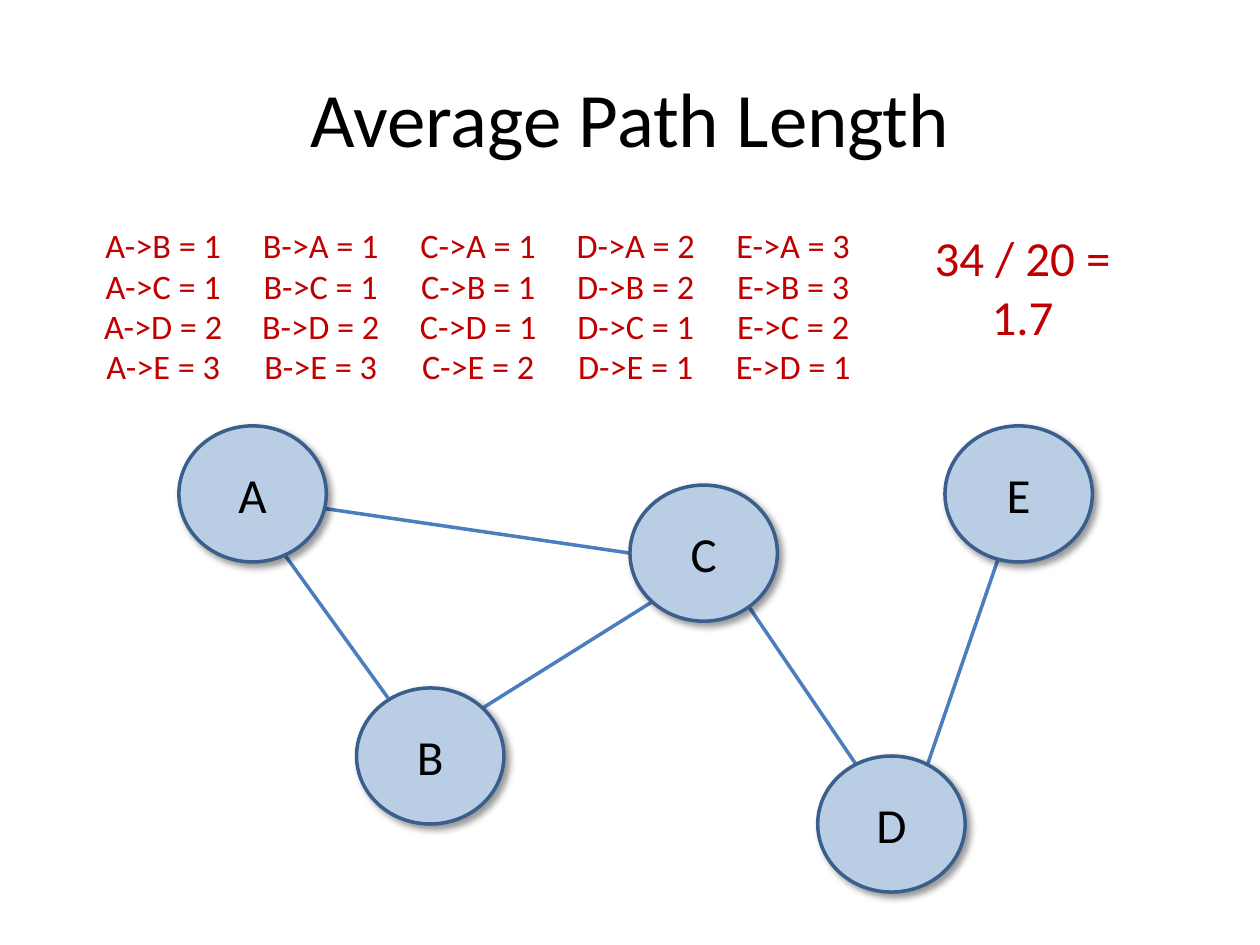
from lxml.etree import SubElement
from pptx import Presentation
from pptx.dml.color import RGBColor
from pptx.enum.shapes import MSO_CONNECTOR, MSO_SHAPE
from pptx.enum.text import MSO_ANCHOR, PP_ALIGN
from pptx.oxml import parse_xml
from pptx.oxml.ns import nsdecls, qn
from pptx.util import Inches, Pt

BLACK = RGBColor(0x00, 0x00, 0x00)
RED = RGBColor(0xC0, 0x00, 0x00)
NODE_FILL = RGBColor(0xB9, 0xCD, 0xE5)
NODE_LINE = RGBColor(0x3A, 0x5F, 0x8C)
EDGE_COLOR = RGBColor(0x4B, 0x7E, 0xBC)

FONT = "Calibri"
NODE_WIDTH, NODE_HEIGHT = 1.17, 1.08
COLUMN_LEFT, COLUMN_STEP = 0.42, 1.25

NODES = {
    "A": (1.42, 3.38),
    "B": (2.83, 5.46),
    "C": (5, 3.85),
    "D": (6.49, 6),
    "E": (7.5, 3.38),
}
EDGES = [
    ((2.25, 4.39), (3.08, 5.54)),  # A-B
    ((2.33, 4), (5, 4.39)),  # A-C
    ((5.17, 4.78), (3.83, 5.62)),  # C-B
    ((5.92, 4.78), (6.83, 6.12)),  # C-D
    ((7.34, 6.13), (8.25, 3.48)),  # D-E
]
# Path lengths from each node to the other nodes, in alphabetical order
PATH_LENGTHS = {
    "A": (1, 1, 2, 3),
    "B": (1, 1, 2, 3),
    "C": (1, 1, 1, 2),
    "D": (2, 2, 1, 1),
    "E": (3, 3, 2, 1),
}
SHADOW_XML = f"""<a:effectLst {nsdecls("a")}>
  <a:outerShdw blurRad="{Pt(4)}" dist="{Pt(3)}" dir="2700000" rotWithShape="0">
    <a:srgbClr val="000000"><a:alpha val="40000"/></a:srgbClr>
  </a:outerShdw>
</a:effectLst>"""


def set_text(text_frame, text, size, color):
    """Write one centred paragraph; newlines become line breaks."""
    text_frame.word_wrap = True
    paragraph = text_frame.paragraphs[0]
    paragraph.text = text
    paragraph.alignment = PP_ALIGN.CENTER
    for run in paragraph.runs:
        run.font.name = FONT
        run.font.size = Pt(size)
        run.font.color.rgb = color
    return paragraph


def add_title(slide, text):
    title = slide.shapes.title
    title.left, title.top = Inches(0.5), Inches(0.3)
    title.width, title.height = Inches(9), Inches(1.25)
    title.text_frame.vertical_anchor = MSO_ANCHOR.MIDDLE
    set_text(title.text_frame, text, 44, BLACK)


def add_red_text(slide, left, top, text, size):
    box = slide.shapes.add_textbox(
        Inches(left), Inches(top), Inches(1.75), Inches(1.18)
    )
    return set_text(box.text_frame, text, size, RED)


def add_path_column(slide, index, start):
    targets = [node for node in PATH_LENGTHS if node != start]
    lines = [
        f"{start}->{target} = {length}"
        for target, length in zip(targets, PATH_LENGTHS[start])
    ]
    left = COLUMN_LEFT + index * COLUMN_STEP
    paragraph = add_red_text(slide, left, 1.75, "\n".join(lines), 19.6)
    paragraph.line_spacing = 0.98


def add_edge(slide, start, end):
    edge = slide.shapes.add_connector(
        MSO_CONNECTOR.STRAIGHT, *map(Inches, start + end)
    )
    edge.line.color.rgb = EDGE_COLOR
    edge.line.width = Pt(2)
    SubElement(edge._element.spPr, qn("a:effectLst"))


def add_node(slide, name, left, top):
    node = slide.shapes.add_shape(
        MSO_SHAPE.OVAL,
        Inches(left), Inches(top), Inches(NODE_WIDTH), Inches(NODE_HEIGHT),
    )
    node.fill.solid()
    node.fill.fore_color.rgb = NODE_FILL
    node.line.color.rgb = NODE_LINE
    node.line.width = Pt(2)
    node._element.spPr.append(parse_xml(SHADOW_XML))
    node.text_frame.vertical_anchor = MSO_ANCHOR.MIDDLE
    set_text(node.text_frame, name, 28, BLACK)


def main():
    presentation = Presentation()
    presentation.slide_width, presentation.slide_height = Inches(10), Inches(7.5)
    slide = presentation.slides.add_slide(presentation.slide_layouts[5])

    add_title(slide, "Average Path Length")
    for index, start in enumerate(PATH_LENGTHS):
        add_path_column(slide, index, start)
    add_red_text(slide, 7.24, 1.76, "34 / 20 = 1.7", 28)
    for start, end in EDGES:
        add_edge(slide, start, end)
    for name, (left, top) in NODES.items():
        add_node(slide, name, left, top)

    presentation.save("out.pptx")


if __name__ == "__main__":
    main()
